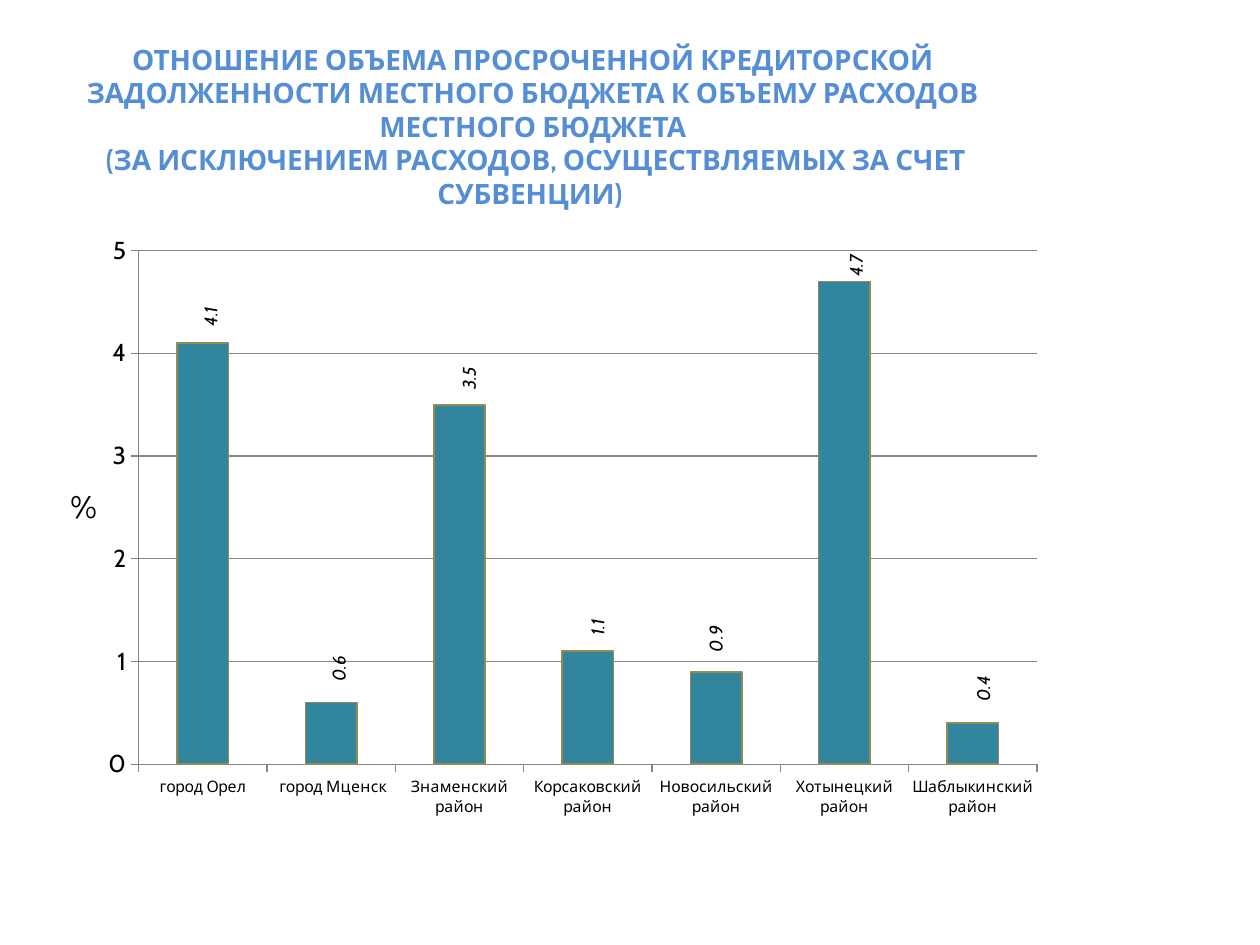
from pptx import Presentation
from pptx.chart.data import CategoryChartData
from pptx.dml.color import RGBColor
from pptx.enum.chart import XL_CHART_TYPE, XL_TICK_MARK
from pptx.enum.text import MSO_ANCHOR, PP_ALIGN
from pptx.oxml import parse_xml
from pptx.oxml.ns import nsdecls, qn
from pptx.util import Pt

PX = 914400 // 126
COLUMN = XL_CHART_TYPE.COLUMN_STACKED
OUTSIDE = XL_TICK_MARK.OUTSIDE
CENTER = PP_ALIGN.CENTER
TOP, MIDDLE = MSO_ANCHOR.TOP, MSO_ANCHOR.MIDDLE

THEME = {
    "font": "Cabin",
    "title": RGBColor(0x55, 0x8E, 0xD5),
    "text": RGBColor(0, 0, 0),
    "bar": RGBColor(0x31, 0x85, 0x9C),
    "bar_line": RGBColor(0x94, 0x8A, 0x54),
    "grid": RGBColor(0x86, 0x86, 0x86),
    "title_size": 16,
    "unit_size": 18,
    "value_size": 14,
    "category_size": 9,
    "label_size": 10.5,
}


def style(font, size, color=THEME["text"], bold=False, italic=False):
    font.name = THEME["font"]
    font.size = Pt(size)
    font.color.rgb = color
    font.bold = bold
    font.italic = italic


def add_text(s, text, box, size, color=THEME["text"], bold=False, anchor=TOP):
    sp = s.shapes.add_textbox(*(v * PX for v in box))
    tf = sp.text_frame
    tf.word_wrap = True
    tf.vertical_anchor = anchor
    p = tf.paragraphs[0]
    p.text = text
    p.alignment = CENTER
    for r in p.runs:
        style(r.font, size, color, bold)


prs = Presentation()
prs.slide_width, prs.slide_height = 1260 * PX, 945 * PX
s = prs.slides.add_slide(prs.slide_layouts[6])

add_text(
    s,
    "ОТНОШЕНИЕ ОБЪЕМА ПРОСРОЧЕННОЙ КРЕДИТОРСКОЙ ЗАДОЛЖЕННОСТИ МЕСТНОГО "
    "БЮДЖЕТА К ОБЪЕМУ РАСХОДОВ МЕСТНОГО БЮДЖЕТА\n"
    " (ЗА ИСКЛЮЧЕНИЕМ РАСХОДОВ, ОСУЩЕСТВЛЯЕМЫХ ЗА СЧЕТ СУБВЕНЦИИ) ",
    (0, 36, 1066, 115), THEME["title_size"], color=THEME["title"], bold=True,
)

districts = [
    ("город Орел", 4.1, (8, -237)),
    (" город Мценск", 0.6, (8, -65)),
    ("Знаменский район", 3.5, (10, -206)),
    ("Корсаковский район", 1.1, (10, -80)),
    ("Новосильский район", 0.9, (0, -79)),
    ("Хотынецкий район", 4.7, (12, -257)),
    ("Шаблыкинский район", 0.4, (11, -55)),
]
data = CategoryChartData(number_format="0.0")
data.categories = [name for name, value, shift in districts]
data.add_series("Series 1", [value for name, value, shift in districts])

chart_w, chart_h = 997, 684
chart = s.shapes.add_chart(
    COLUMN, 45 * PX, 235 * PX, chart_w * PX, chart_h * PX, data
).chart
chart.has_legend = False
chart.has_title = False
style(chart.font, THEME["unit_size"])

plot_area = chart._chartSpace.chart.plotArea
for layout in plot_area.findall(qn("c:layout")):
    plot_area.remove(layout)
plot_area.insert(0, parse_xml(
    f'<c:layout {nsdecls("c")}><c:manualLayout><c:layoutTarget val="inner"/>'
    '<c:xMode val="edge"/><c:yMode val="edge"/><c:x val="0.094"/><c:y val="0.023"/>'
    '<c:w val="0.901"/><c:h val="0.751"/></c:manualLayout></c:layout>'
))

for axis, size in (
    (chart.category_axis, THEME["category_size"]),
    (chart.value_axis, THEME["value_size"]),
):
    style(axis.tick_labels.font, size)
    axis.major_tick_mark = OUTSIDE
    axis.format.line.color.rgb = THEME["grid"]

values = chart.value_axis
values.minimum_scale, values.maximum_scale, values.major_unit = 0, 5, 1
values.tick_labels.number_format = "#,##0"
values.tick_labels.number_format_is_linked = False
values.has_major_gridlines = True
values.major_gridlines.format.line.color.rgb = THEME["grid"]

plot = chart.plots[0]
plot.gap_width, plot.overlap = 150, 100
plot.vary_by_categories = False
bars = plot.series[0]
bars.format.fill.solid()
bars.format.fill.fore_color.rgb = THEME["bar"]
bars.format.line.color.rgb = THEME["bar_line"]
bars.format.line.width = Pt(0.9)

labels = bars.data_labels
labels.show_value = True
labels.number_format = "0.0"
labels.number_format_is_linked = False
style(labels.font, THEME["label_size"], italic=True)
for i in range(len(districts)):
    style(bars.points[i].data_label.font, THEME["label_size"], italic=True)
for body in labels._element.iter(qn("a:bodyPr")):
    body.set("rot", "-5400000")
    body.set("vert", "horz")
for label, (name, value, (dx, dy)) in zip(
    labels._element.findall(qn("c:dLbl")), districts
):
    label.insert(1, parse_xml(
        f'<c:layout {nsdecls("c")}><c:manualLayout><c:x val="{dx / chart_w:.4f}"/>'
        f'<c:y val="{dy / chart_h:.4f}"/></c:manualLayout></c:layout>'
    ))

for leader in labels._element.findall(qn("c:showLeaderLines")):
    leader.set("val", "0")
labels._element.append(parse_xml(
    f'<c:extLst {nsdecls("c")}><c:ext uri="{{CE6537A1-D6FC-4f65-9D91-7224C49458BB}}" '
    'xmlns:c15="http://schemas.microsoft.com/office/drawing/2012/chart">'
    '<c15:showLeaderLines val="0"/></c:ext></c:extLst>'
))

add_text(s, "%", (54, 472, 59, 67), THEME["unit_size"], anchor=MIDDLE)

prs.save("out.pptx")
